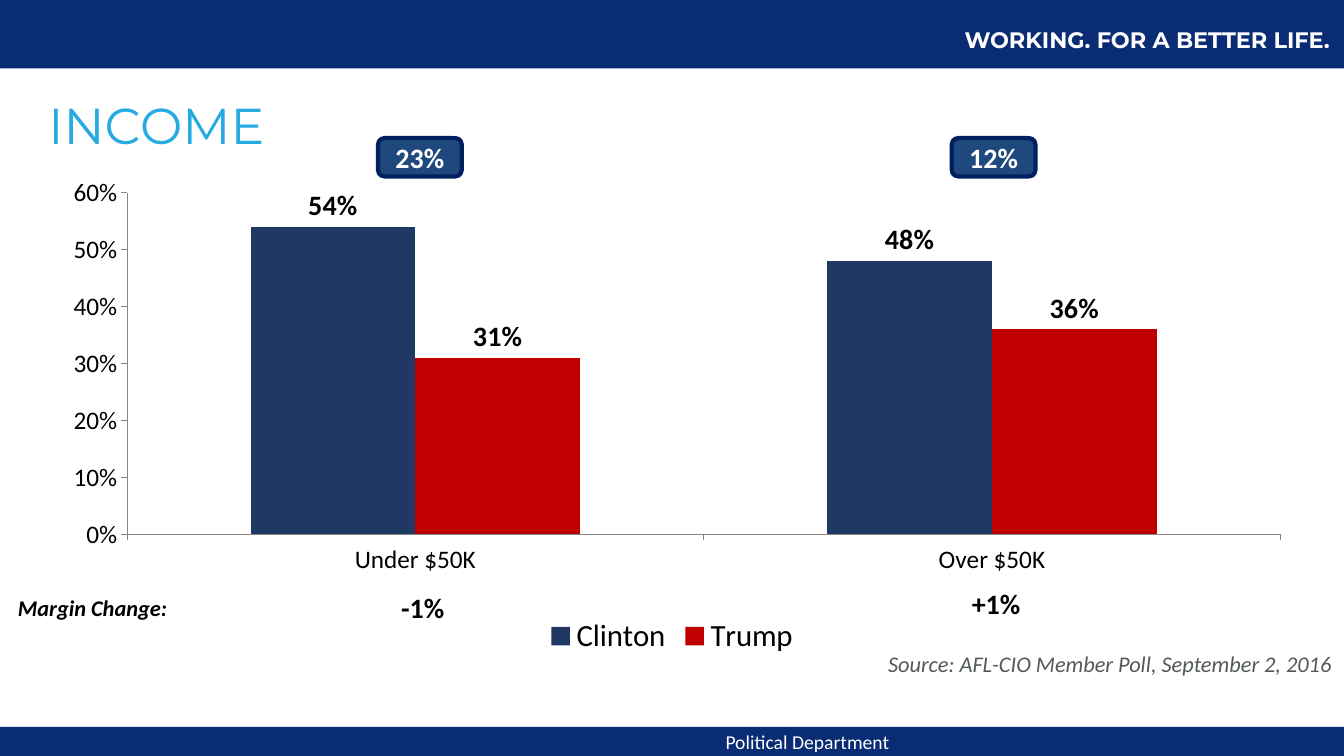
from dataclasses import dataclass

from lxml.etree import SubElement
from pptx import Presentation
from pptx.chart.data import CategoryChartData
from pptx.dml.color import RGBColor
from pptx.enum.chart import XL_CHART_TYPE, XL_LABEL_POSITION, XL_LEGEND_POSITION, XL_TICK_MARK
from pptx.enum.shapes import MSO_SHAPE
from pptx.enum.text import MSO_ANCHOR, PP_ALIGN
from pptx.oxml.ns import qn
from pptx.util import Inches, Pt


@dataclass(frozen=True)
class Theme:
    band: str = "092C74"
    title: str = "25AAE1"
    badge: str = "1F497D"
    badge_line: str = "002060"
    white: str = "FFFFFF"
    black: str = "000000"
    source: str = "535959"
    axis: str = "868686"
    series: tuple = ("203864", "C00000")
    head_font: str = "Montserrat"
    body_font: str = "Calibri"
    chart_font: str = "Cabin"
    title_size: int = 36
    legend_size: int = 22
    value_size: int = 20
    axis_size: int = 18
    note_size: int = 16
    footer_size: int = 14
    chart_size: int = 10


THEME = Theme()


def set_font(font, size, color, name=THEME.body_font, bold=False, italic=False):
    font.name, font.size = name, Pt(size)
    font.bold, font.italic = bold, italic
    font.color.rgb = RGBColor.from_string(color)


def add_text(slide, box, text, size, color, align=PP_ALIGN.LEFT,
             anchor=MSO_ANCHOR.TOP, **style):
    tf = slide.shapes.add_textbox(*map(Inches, box)).text_frame
    tf.word_wrap = True
    tf.vertical_anchor = anchor
    p = tf.paragraphs[0]
    p.text, p.alignment = text, align
    set_font(p.font, size, color, **style)


def add_box(slide, kind, box, fill):
    sp = slide.shapes.add_shape(kind, *map(Inches, box))
    sp.shadow.inherit = False
    sp.fill.solid()
    sp.fill.fore_color.rgb = RGBColor.from_string(fill)
    sp.line.fill.background()
    return sp


def add_header(slide, left, top, width, height):
    add_box(slide, MSO_SHAPE.RECTANGLE, (left, top, width, height), THEME.band)
    add_text(slide, (left + 8.61, top + 0.21, 5.54, 0.37), "WORKING. FOR A BETTER LIFE.",
             THEME.note_size, THEME.white, PP_ALIGN.CENTER, name=THEME.head_font, bold=True)


def add_footer(slide, left, top, width, height):
    add_box(slide, MSO_SHAPE.RECTANGLE, (left, top, width, height), THEME.band)
    add_text(slide, (left + 4.42, top + 0.07, 4.5, 0.15), "Political Department",
             THEME.footer_size, THEME.white, PP_ALIGN.RIGHT, MSO_ANCHOR.MIDDLE)


def set_title(slide, left, top, width, height):
    title = slide.shapes.title
    title.left, title.top = Inches(left), Inches(top)
    title.width, title.height = Inches(width), Inches(height)
    tf = title.text_frame
    tf.vertical_anchor = MSO_ANCHOR.MIDDLE
    p = tf.paragraphs[0]
    p.text, p.alignment, p.line_spacing = "INCOME", PP_ALIGN.LEFT, 0.9
    set_font(p.font, THEME.title_size, THEME.title, THEME.head_font)


def set_plot_area(chart, x, y, w, h):
    plot_area = chart._chartSpace.chart.plotArea
    layout = plot_area.find(qn("c:layout"))
    if layout is None:
        layout = SubElement(plot_area, qn("c:layout"))
        plot_area.insert(0, layout)
    manual = SubElement(layout, qn("c:manualLayout"))
    settings = (("layoutTarget", "inner"), ("xMode", "edge"), ("yMode", "edge"),
                ("x", x), ("y", y), ("w", w), ("h", h))
    for tag, value in settings:
        SubElement(manual, qn(f"c:{tag}")).set("val", str(value))


def add_income_chart(slide, left, top, width, height):
    data = CategoryChartData(number_format="0%")
    data.categories = ["Under $50K", "Over $50K"]
    data.add_series("Clinton", (0.54, 0.48))
    data.add_series("Trump", (0.31, 0.36))
    chart = slide.shapes.add_chart(XL_CHART_TYPE.COLUMN_CLUSTERED,
                                   *map(Inches, (left, top, width, height)), data).chart
    chart.has_title = False
    set_font(chart.font, THEME.chart_size, THEME.black, THEME.chart_font)
    set_plot_area(chart, 0.07, 0.04, 0.91, 0.7)

    # Axes
    for axis in (chart.category_axis, chart.value_axis):
        axis.has_major_gridlines = False
        axis.major_tick_mark = XL_TICK_MARK.OUTSIDE
        axis.minor_tick_mark = XL_TICK_MARK.NONE
        axis.format.line.color.rgb = RGBColor.from_string(THEME.axis)
        set_font(axis.tick_labels.font, THEME.axis_size, THEME.black)
    values = chart.value_axis
    values.minimum_scale, values.maximum_scale, values.major_unit = 0, 0.6, 0.1
    values.tick_labels.number_format = "0%"
    values.tick_labels.number_format_is_linked = False

    # Columns and their labels
    plot = chart.plots[0]
    plot.gap_width, plot.overlap, plot.vary_by_categories = 150, 0, False
    for series, color in zip(plot.series, THEME.series):
        series.format.fill.solid()
        series.format.fill.fore_color.rgb = RGBColor.from_string(color)
        labels = series.data_labels
        labels.show_value = True
        labels.number_format, labels.number_format_is_linked = "0%", False
        labels.position = XL_LABEL_POSITION.OUTSIDE_END
        set_font(labels.font, THEME.value_size, THEME.black, bold=True)

    # Legend
    chart.has_legend = True
    chart.legend.position = XL_LEGEND_POSITION.BOTTOM
    chart.legend.include_in_layout = False
    set_font(chart.legend.font, THEME.legend_size, THEME.black)


def add_margin_badge(slide, left, top, width, height, text):
    sp = add_box(slide, MSO_SHAPE.ROUNDED_RECTANGLE, (left, top, width, height), THEME.badge)
    sp.line.color.rgb = RGBColor.from_string(THEME.badge_line)
    sp.line.width = Pt(3)
    tf = sp.text_frame
    tf.vertical_anchor = MSO_ANCHOR.MIDDLE
    p = tf.paragraphs[0]
    p.text, p.alignment = text, PP_ALIGN.CENTER
    set_font(p.font, THEME.value_size, THEME.white, bold=True)


def add_margin_changes(slide, left, top):
    add_text(slide, (left, top + 0.08, 2.23, 0.37), "Margin Change:",
             THEME.note_size, THEME.black, bold=True, italic=True)
    for dx, dy, change in ((3.8, 0.04, "-1%"), (9.46, 0, "+1%")):
        add_text(slide, (left + dx, top + dy, 0.73, 0.44), change,
                 THEME.value_size, THEME.black, bold=True)


def add_income_slide(prs):
    slide = prs.slides.add_slide(prs.slide_layouts.get_by_name("Title Only"))
    add_header(slide, 0, 0, 13.33, 0.68)
    add_footer(slide, 0, 7.21, 13.33, 0.29)
    set_title(slide, 0.38, 0.79, 11.55, 0.96)
    for left, margin in ((3.75, "23%"), (9.44, "12%")):
        add_margin_badge(slide, left, 1.37, 0.83, 0.38, margin)
    add_income_chart(slide, 0.38, 1.72, 12.57, 4.84)
    add_margin_changes(slide, 0.08, 5.77)
    add_text(slide, (8.71, 6.4, 4.86, 0.37), "Source: AFL-CIO Member Poll, September 2, 2016",
             THEME.note_size, THEME.source, italic=True)


def main():
    prs = Presentation()
    prs.slide_width, prs.slide_height = Inches(13.33), Inches(7.5)
    add_income_slide(prs)
    prs.save("out.pptx")


if __name__ == "__main__":
    main()
